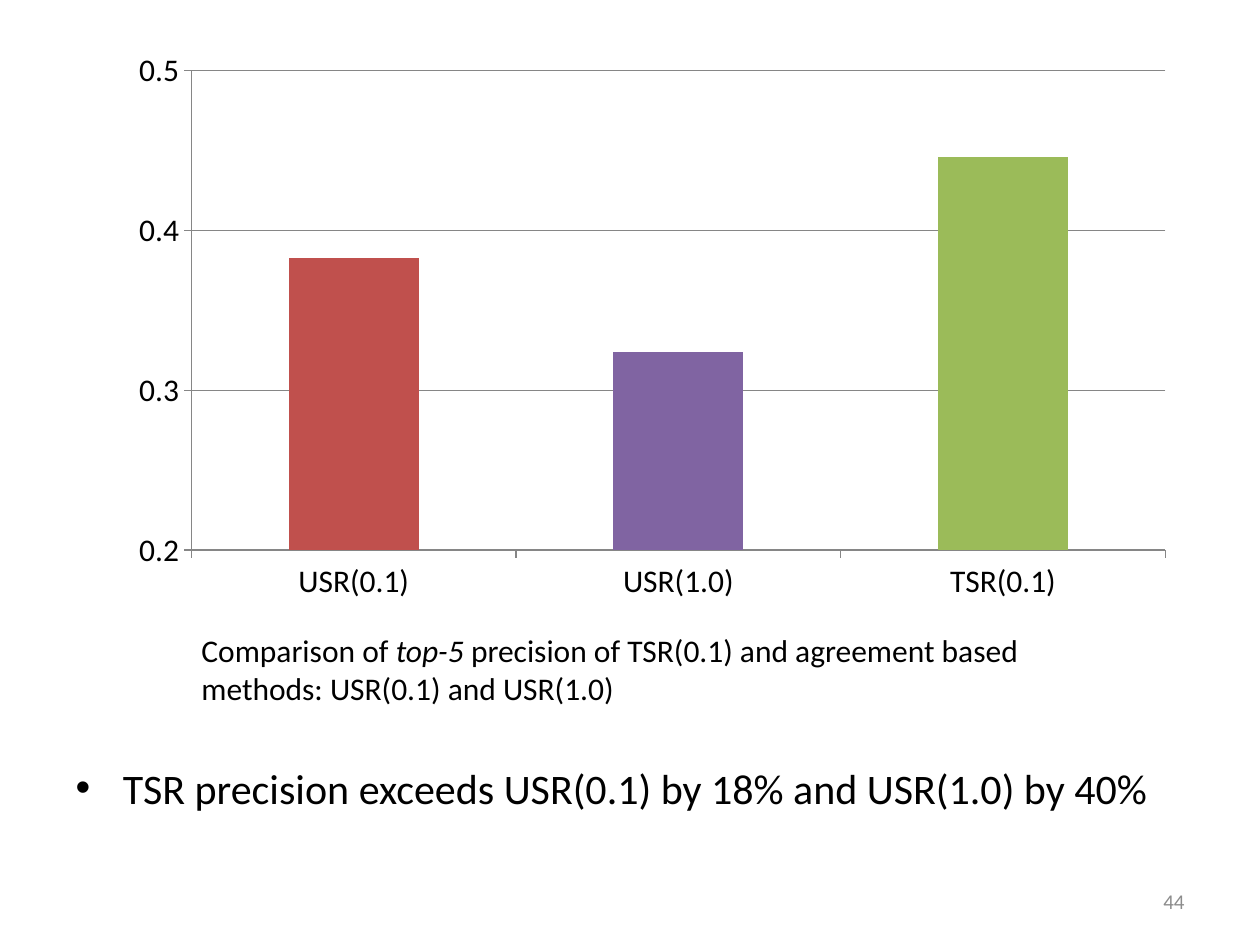
"""Builds a slide comparing top-5 precision of TSR and USR in a column chart."""
import pptx
import pptx.chart.data
import pptx.dml.color
import pptx.enum.chart
import pptx.enum.text
import pptx.oxml
import pptx.oxml.ns
import pptx.util

RGBColor = pptx.dml.color.RGBColor
BLACK = RGBColor(0x00, 0x00, 0x00)
GRAY = RGBColor(0x8C, 0x8C, 0x8C)
LINE_GRAY = RGBColor(0x86, 0x86, 0x86)
BLUE = RGBColor(0x4F, 0x81, 0xBD)
RED = RGBColor(0xC0, 0x50, 0x4D)
PURPLE = RGBColor(0x80, 0x64, 0xA2)
GREEN = RGBColor(0x9B, 0xBB, 0x59)

FONT = "Calibri"
SLIDE_SIZE = (1260, 945)
PRECISIONS = [
    ("USR(0.1)", 0.383, RED),
    ("USR(1.0)", 0.324, PURPLE),
    ("TSR(0.1)", 0.446, GREEN),
]
CAPTION = [
    ("Comparison of ", False),
    ("top-5 ", True),
    ("precision of TSR(0.1) and agreement based methods: USR(0.1) and USR(1.0)", False),
]
FINDING = "TSR precision exceeds USR(0.1) by 18% and USR(1.0) by 40%"
PAGE_NUMBER = "44"

CHART_BOX = (105, 42, 1082, 571)
CAPTION_BOX = (189, 625, 924, 89)
FINDING_BOX = (63, 756, 1134, 168)
NUMBER_BOX = (903, 876, 294, 50)
PLOT_AREA = {"x": 0.08, "y": 0.05, "w": 0.9, "h": 0.84}


def px(length):
    return pptx.util.Emu(round(length * 914400 / 126))


def set_font(font, size, color=BLACK):
    font.name = FONT
    font.size = pptx.util.Pt(size)
    font.color.rgb = color


def add_text(slide, box, runs, size, color=BLACK):
    shape = slide.shapes.add_textbox(*map(px, box))
    shape.text_frame.word_wrap = True
    paragraph = shape.text_frame.paragraphs[0]
    set_font(paragraph.font, size, color)
    for text, italic in runs:
        run = paragraph.add_run()
        run.text = text
        if italic:
            run.font.italic = True
    return shape.text_frame


def style_axis(axis):
    set_font(axis.tick_labels.font, 18)
    axis.major_tick_mark = pptx.enum.chart.XL_TICK_MARK.OUTSIDE
    axis.minor_tick_mark = pptx.enum.chart.XL_TICK_MARK.NONE
    axis.format.line.color.rgb = LINE_GRAY


def place_plot(chart):
    namespace = pptx.oxml.ns.nsdecls("c")
    modes = "".join(f'<c:{side}Mode val="edge"/>' for side in "xy")
    sizes = "".join(f'<c:{side} val="{part}"/>' for side, part in PLOT_AREA.items())
    layout = pptx.oxml.parse_xml(
        f'<c:layout {namespace}><c:manualLayout><c:layoutTarget val="inner"/>'
        f"{modes}{sizes}</c:manualLayout></c:layout>"
    )
    plot_area = chart.element.find(".//" + pptx.oxml.ns.qn("c:plotArea"))
    for previous in plot_area.findall(pptx.oxml.ns.qn("c:layout")):
        plot_area.remove(previous)
    plot_area.insert(0, layout)


def add_precision_chart(slide):
    data = pptx.chart.data.CategoryChartData()
    data.categories = [name for name, _, _ in PRECISIONS]
    data.add_series("Series 1", [value for _, value, _ in PRECISIONS])
    chart = slide.shapes.add_chart(
        pptx.enum.chart.XL_CHART_TYPE.COLUMN_CLUSTERED, *map(px, CHART_BOX), data
    ).chart
    set_font(chart.font, 10)
    chart.has_title = False
    chart.has_legend = False
    place_plot(chart)

    plot = chart.plots[0]
    plot.gap_width = 150
    plot.vary_by_categories = False
    series = plot.series[0]
    series.format.fill.solid()
    series.format.fill.fore_color.rgb = BLUE
    for index, (_, _, color) in enumerate(PRECISIONS):
        fill = series.points[index].format.fill
        fill.solid()
        fill.fore_color.rgb = color

    style_axis(chart.category_axis)
    value_axis = chart.value_axis
    style_axis(value_axis)
    value_axis.minimum_scale = 0.2
    value_axis.maximum_scale = 0.5
    value_axis.major_unit = 0.1
    value_axis.has_major_gridlines = True
    value_axis.major_gridlines.format.line.color.rgb = LINE_GRAY


def add_finding(slide):
    body = slide.placeholders[1]
    body.left, body.top, body.width, body.height = map(px, FINDING_BOX)
    body.text_frame.text = FINDING
    set_font(body.text_frame.paragraphs[0].font, 24)


def main():
    presentation = pptx.Presentation()
    presentation.slide_width, presentation.slide_height = map(px, SLIDE_SIZE)
    slide = presentation.slides.add_slide(presentation.slide_layouts[1])
    title = slide.shapes.title.element
    title.getparent().remove(title)

    number = add_text(slide, NUMBER_BOX, [(PAGE_NUMBER, False)], 12, GRAY)
    number.vertical_anchor = pptx.enum.text.MSO_ANCHOR.MIDDLE
    number.paragraphs[0].alignment = pptx.enum.text.PP_ALIGN.RIGHT
    add_text(slide, CAPTION_BOX, CAPTION, 18)
    add_finding(slide)
    add_precision_chart(slide)
    presentation.save("out.pptx")


if __name__ == "__main__":
    main()
